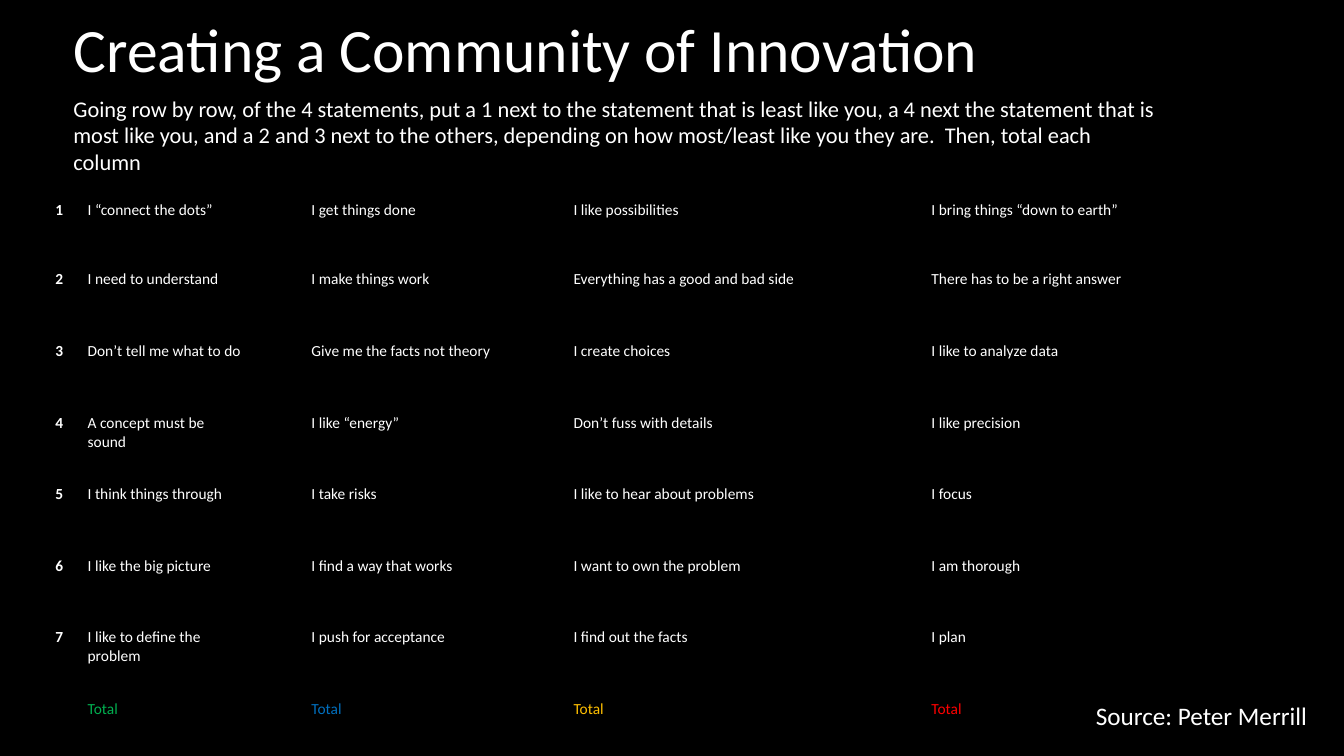
from lxml import etree
from pptx import Presentation
from pptx.dml.color import RGBColor
from pptx.enum.text import MSO_ANCHOR, PP_ALIGN
from pptx.oxml.ns import qn
from pptx.util import Inches, Pt

LEFT = PP_ALIGN.LEFT
MIDDLE = MSO_ANCHOR.MIDDLE

# Content
TITLE = "Creating a Community of Innovation"
INSTRUCTIONS = (
    "Going row by row, of the 4 statements, put a 1 next to the statement that is "
    "least like you, a 4 next the statement that is most like you, and a 2 and 3 next "
    "to the others, depending on how most/least like you they are.  Then, total each column"
)
SOURCE = "Source: Peter Merrill"
STATEMENTS = [
    ("I “connect the dots”", "I get things done",
     "I like possibilities", "I bring things “down to earth”"),
    ("I need to understand", "I make things work",
     "Everything has a good and bad side", "There has to be a right answer"),
    ("Don’t tell me what to do", "Give me the facts not theory",
     "I create choices", "I like to analyze data"),
    ("A concept must be sound", "I like “energy”",
     "Don’t fuss with details", "I like precision"),
    ("I think things through", "I take risks",
     "I like to hear about problems", "I focus"),
    ("I like the big picture", "I find a way that works",
     "I want to own the problem", "I am thorough"),
    ("I like to define the problem", "I push for acceptance",
     "I find out the facts", "I plan"),
]
TOTAL = "Total"

# Style and grid, in inches
COLORS = {"background": "000000", "text": "FFFFFF"}
TOTAL_COLORS = ["00B050", "0070C0", "FFC000", "FF0000"]
FONT = "Calibri"
NUMBER_WIDTH = 0.32
STATEMENT_WIDTHS = [1.68, 1.97, 2.93, 2.85]
SCORE_WIDTHS = [0.54, 0.63, 0.62, 0.69]
FIRST_ROW_HEIGHT, ROW_HEIGHT = 0.69, 0.71
TEXT_LEFT = 0.63


def format_paragraph(paragraph, size, color=COLORS["text"], bold=False):
    paragraph.alignment = LEFT
    font = paragraph.font
    font.name, font.size, font.bold = FONT, Pt(size), bold
    font.color.rgb = RGBColor.from_string(color)


def add_text(slide, text, size, left, top, width, height):
    box = slide.shapes.add_textbox(*map(Inches, (left, top, width, height)))
    box.text_frame.word_wrap = True
    box.text_frame.text = text
    format_paragraph(box.text_frame.paragraphs[0], size)


def clear_cell(cell):
    """Give a cell black one-point borders, no fill and tight margins."""
    cell.margin_left = cell.margin_right = Inches(0.07)
    cell.margin_top = cell.margin_bottom = 0
    properties = cell._tc.get_or_add_tcPr()
    for side in ("a:lnL", "a:lnR", "a:lnT", "a:lnB"):
        line = etree.SubElement(properties, qn(side), w=str(Pt(1)))
        fill = etree.SubElement(line, qn("a:solidFill"))
        etree.SubElement(fill, qn("a:srgbClr"), val=COLORS["background"])
    cell.fill.background()


def write_cell(cell, text, **style):
    cell.text = text
    format_paragraph(cell.text_frame.paragraphs[0], 11, **style)


presentation = Presentation()
presentation.slide_width, presentation.slide_height = Inches(13.33), Inches(7.5)
slide = presentation.slides.add_slide(presentation.slide_layouts[5])
slide.background.fill.solid()
slide.background.fill.fore_color.rgb = RGBColor.from_string(COLORS["background"])

# Title
title = slide.shapes.title
title.left, title.top, title.width, title.height = map(
    Inches, (TEXT_LEFT, -0.03, 10.6, 1.1))
title.text_frame.text = TITLE
title.text_frame.vertical_anchor = MIDDLE
title_paragraph = title.text_frame.paragraphs[0]
title_paragraph.line_spacing = 0.9
format_paragraph(title_paragraph, 44)

# Table: a number column, then a statement and a score column per style
widths = [NUMBER_WIDTH]
for pair in zip(STATEMENT_WIDTHS, SCORE_WIDTHS):
    widths.extend(pair)
heights = [FIRST_ROW_HEIGHT] + [ROW_HEIGHT] * len(STATEMENTS)
table = slide.shapes.add_table(
    len(heights), len(widths), Inches(0.48), Inches(1.99),
    Inches(sum(widths)), Inches(sum(heights))).table
table.first_row = table.horz_banding = False
for column, width in zip(table.columns, widths):
    column.width = Inches(width)
for row, height in zip(table.rows, heights):
    row.height = Inches(height)
for cell in table.iter_cells():
    clear_cell(cell)

for index, statements in enumerate(STATEMENTS):
    write_cell(table.cell(index, 0), str(index + 1), bold=True)
    for style, statement in enumerate(statements):
        write_cell(table.cell(index, 2 * style + 1), statement)
for style, color in enumerate(TOTAL_COLORS):
    write_cell(table.cell(len(STATEMENTS), 2 * style + 1), TOTAL, color=color)

# Instructions and source
add_text(slide, INSTRUCTIONS, 16, TEXT_LEFT, 0.89, 11.01, 0.91)
add_text(slide, SOURCE, 18, 10.77, 6.9, 2.35, 0.4)

presentation.save("out.pptx")
